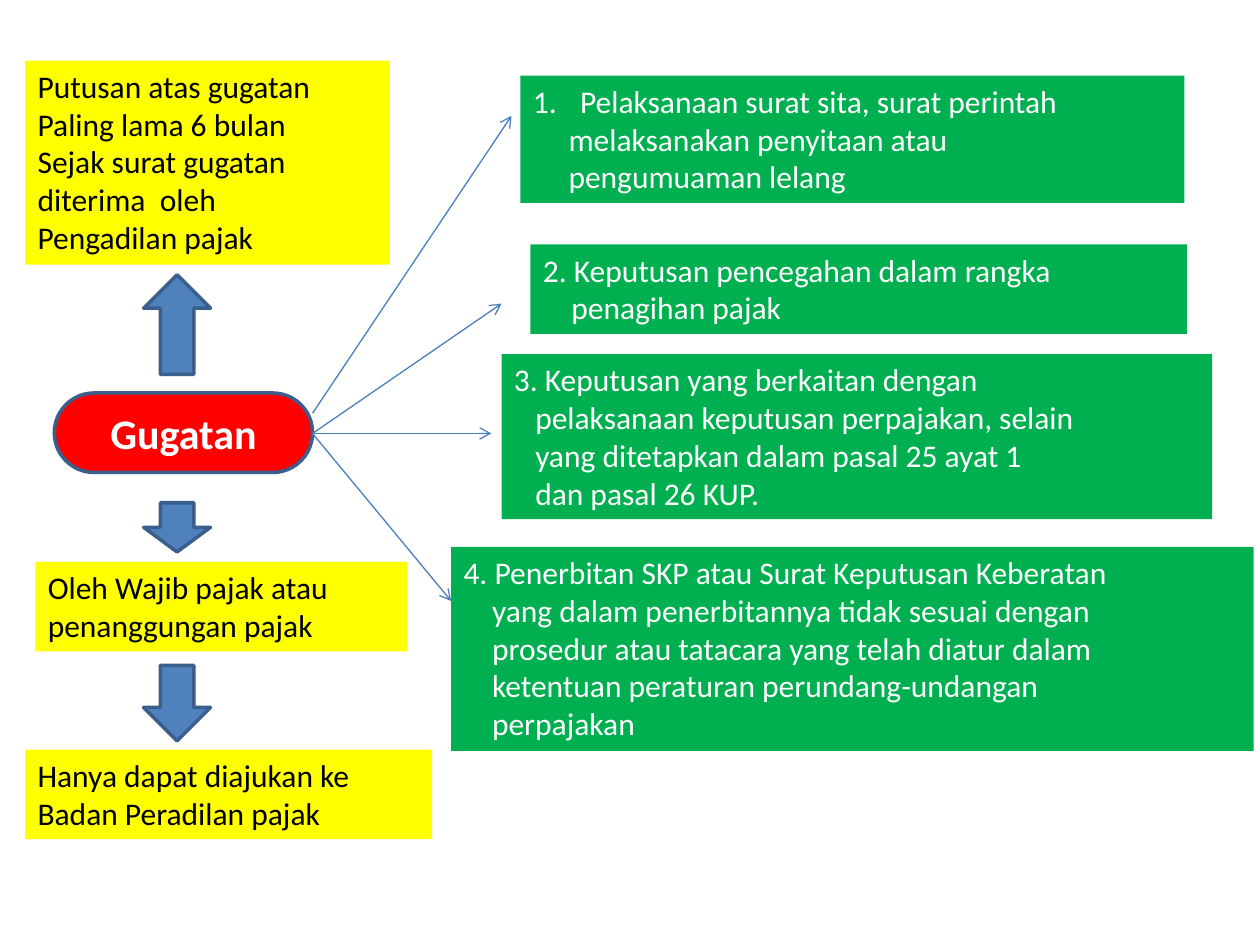
from lxml.etree import SubElement
from pptx import Presentation
from pptx.dml.color import RGBColor
from pptx.enum.shapes import MSO_CONNECTOR as Connector, MSO_SHAPE as Shape
from pptx.enum.text import MSO_ANCHOR as Anchor, PP_ALIGN as Align
from pptx.oxml.ns import qn
from pptx.util import Pt

FONT = "Calibri"
RED = RGBColor(0xFF, 0x00, 0x00)
YELLOW = RGBColor(0xFF, 0xFF, 0x00)
GREEN = RGBColor(0x00, 0xB0, 0x50)
BLUE = RGBColor(0x4F, 0x81, 0xBD)
DARK_BLUE = RGBColor(0x3A, 0x5F, 0x8C)
LINE_BLUE = RGBColor(0x4B, 0x7E, 0xBC)
BLACK = RGBColor(0x00, 0x00, 0x00)
WHITE = RGBColor(0xFF, 0xFF, 0xFF)

# Boxes: left, top, width, height, lines
NOTES = [
    (14.4, 34.6, 208.1, 116.6, ["Putusan atas gugatan", "Paling lama 6 bulan", "Sejak surat gugatan",
                                "diterima  oleh", "Pengadilan pajak"]),
    (20.2, 321.1, 212.4, 51.1, ["Oleh Wajib pajak atau", "penanggungan pajak"]),
    (14.4, 428.4, 232.6, 51.1, ["Hanya dapat diajukan ke", "Badan Peradilan pajak"]),
]
# Grounds: the same, then the indent of the lines after the first
GROUNDS = [
    (297.4, 43.2, 379.4, 72.7, ["Pelaksanaan surat sita, surat perintah",
                                "melaksanakan penyitaan atau", "pengumuaman lelang"], 20.4),
    (303.1, 139.7, 375.1, 51.1, ["2. Keputusan pencegahan dalam rangka", "penagihan pajak"], 16.3),
    (286.6, 202.3, 406.1, 94.3, ["3. Keputusan yang berkaitan dengan",
                                 "pelaksanaan keputusan perpajakan, selain",
                                 "yang ditetapkan dalam pasal 25 ayat 1", "dan pasal 26 KUP."], 12.2),
    (257.8, 312.5, 458.6, 116.6, ["4. Penerbitan SKP atau Surat Keputusan Keberatan",
                                  "yang dalam penerbitannya tidak sesuai dengan",
                                  "prosedur atau tatacara yang telah diatur dalam",
                                  "ketentuan peraturan perundang-undangan", "perpajakan"], 16.3),
]
# Block arrows: preset, top, height
BLOCK_ARROWS = [(Shape.UP_ARROW, 157, 56.9), (Shape.DOWN_ARROW, 287.3, 28.1),
                (Shape.DOWN_ARROW, 380.2, 43.2)]
# Pointers from the topic: start y, end x, end y
POINTERS = [(236.2, 292.3, 66.2), (247.7, 286.6, 173.5), (247.7, 280.8, 247.7), (247.7, 257.8, 343.4)]
POINTER_LEFT = 178.6


def add_block(slide, preset, left, top, width, height, fill, outline=None):
    shape = slide.shapes.add_shape(preset, Pt(left), Pt(top), Pt(width), Pt(height))
    shape.shadow.inherit = False
    shape.fill.solid()
    shape.fill.fore_color.rgb = fill
    if outline is None:
        shape.line.fill.background()
    else:
        shape.line.color.rgb = outline
        shape.line.width = Pt(2)
    return shape


def add_run(paragraph, text, size, color, bold=False):
    run = paragraph.add_run()
    run.text = text
    run.font.name = FONT
    run.font.size = Pt(size)
    run.font.bold = bold
    run.font.color.rgb = color


def add_text_box(slide, left, top, width, height, lines, fill, color, indent=0):
    shape = add_block(slide, Shape.RECTANGLE, left, top, width, height, fill)
    frame = shape.text_frame
    frame.word_wrap = True
    frame.vertical_anchor = Anchor.TOP
    for index, line in enumerate(lines):
        paragraph = frame.paragraphs[0] if index == 0 else frame.add_paragraph()
        paragraph.alignment = Align.LEFT
        add_run(paragraph, line, 18, color)
        if index and indent:
            paragraph._p.get_or_add_pPr().set("marL", str(Pt(indent)))
    return shape


def number_first_line(shape, hanging):
    properties = shape.text_frame.paragraphs[0]._p.get_or_add_pPr()
    properties.set("marL", str(Pt(hanging)))
    properties.set("indent", str(-Pt(hanging)))
    SubElement(properties, qn("a:buFont"), typeface="+mj-lt")
    SubElement(properties, qn("a:buAutoNum"), type="arabicPeriod")


def add_pointer(slide, start_y, end_x, end_y):
    pointer = slide.shapes.add_connector(
        Connector.STRAIGHT, Pt(POINTER_LEFT), Pt(start_y), Pt(end_x), Pt(end_y))
    pointer.line.color.rgb = LINE_BLUE
    pointer.line.width = Pt(0.75)
    SubElement(pointer.line._get_or_add_ln(), qn("a:tailEnd"), type="arrow")
    SubElement(pointer._element.spPr, qn("a:effectLst"))


def add_topic(slide):
    topic = add_block(slide, Shape.ROUNDED_RECTANGLE, 31, 224.6, 147.6, 45.4, RED, DARK_BLUE)
    topic.adjustments[0] = 0.5
    topic.text_frame.vertical_anchor = Anchor.MIDDLE
    paragraph = topic.text_frame.paragraphs[0]
    paragraph.alignment = Align.CENTER
    add_run(paragraph, "Gugatan", 24, WHITE, bold=True)


def main():
    presentation = Presentation()
    presentation.slide_width = Pt(720)
    presentation.slide_height = Pt(540)
    slide = presentation.slides.add_slide(presentation.slide_layouts[6])

    # Topic and the column of notes
    add_topic(slide)
    for preset, top, height in BLOCK_ARROWS:
        add_block(slide, preset, 82.1, top, 38.2, height, BLUE, DARK_BLUE)
    for left, top, width, height, lines in NOTES:
        add_text_box(slide, left, top, width, height, lines, YELLOW, BLACK)

    # Grounds for the lawsuit and their pointers
    grounds = [add_text_box(slide, left, top, width, height, lines, GREEN, WHITE, indent)
               for left, top, width, height, lines, indent in GROUNDS]
    number_first_line(grounds[0], 27)
    for start_y, end_x, end_y in POINTERS:
        add_pointer(slide, start_y, end_x, end_y)

    presentation.save("out.pptx")


if __name__ == "__main__":
    main()
